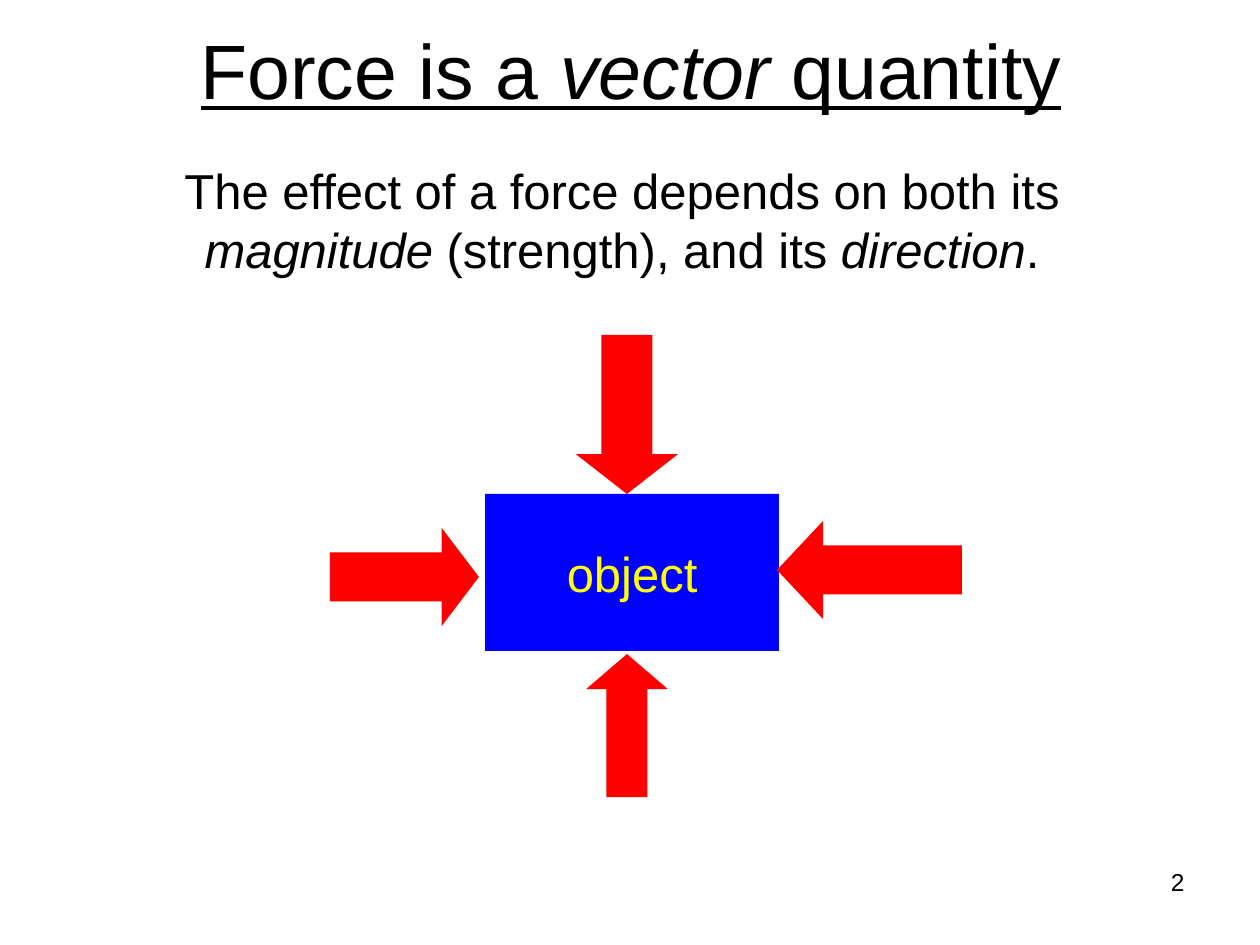
"""Build a slide on force as a vector quantity."""
from dataclasses import dataclass

from lxml import etree
from pptx import Presentation
from pptx.dml.color import RGBColor
from pptx.enum.shapes import MSO_SHAPE
from pptx.enum.text import MSO_ANCHOR, MSO_AUTO_SIZE, PP_ALIGN
from pptx.oxml.ns import qn
from pptx.util import Pt

RECT = MSO_SHAPE.RECTANGLE
RIGHT, LEFT = MSO_SHAPE.RIGHT_ARROW, MSO_SHAPE.LEFT_ARROW
UP, DOWN = MSO_SHAPE.UP_ARROW, MSO_SHAPE.DOWN_ARROW
TOP, MIDDLE = MSO_ANCHOR.TOP, MSO_ANCHOR.MIDDLE
CENTER, END = PP_ALIGN.CENTER, PP_ALIGN.RIGHT
FIXED = MSO_AUTO_SIZE.NONE
SCALE = 914400 / 126


@dataclass(frozen=True)
class Theme:
    font: str = "Arial"
    ink: str = "000000"
    block: str = "0000FF"
    label: str = "FFFF00"
    force: str = "FF0000"
    head: int = 44
    main: int = 28
    note: int = 14


theme = Theme()


def place(*box):
    return [round(n * SCALE) for n in box]


def write(shape, *lines, size, color=theme.ink, align=CENTER, anchor=TOP,
          under=None, wrap=True):
    """Write lines of text; every second part of a line is italic."""
    frame = shape.text_frame
    frame.word_wrap, frame.auto_size = wrap, FIXED
    frame.vertical_anchor = anchor
    para = frame.paragraphs[0]
    para.alignment = align
    for row, line in enumerate(lines):
        if row:
            para.add_line_break()
        for part, text in enumerate(line.split("*")):
            if text:
                run = para.add_run()
                run.text = text
                font = run.font
                font.name, font.size = theme.font, Pt(size)
                font.italic, font.underline = part % 2 == 1, under
                font.color.rgb = RGBColor.from_string(color)
    return para


deck = Presentation()
deck.slide_width, deck.slide_height = place(1260, 945)
slide = deck.slides.add_slide(deck.slide_layouts[1])
shapes = slide.shapes

title, body = slide.placeholders
title.left, title.top, title.width, title.height = place(64, 13, 1134, 112)
write(title, "Force is a *vector* quantity", size=theme.head,
      anchor=MIDDLE, under=True)

body.left, body.top, body.width, body.height = place(0, 154, 1244, 162)
para = write(body, "The effect of a force depends on both its",
             "*magnitude* (strength), and its *direction*.", size=theme.main)
para.space_before = Pt(theme.main * 0.2)
props = para._p.get_or_add_pPr()
props.set("marL", "0")
props.set("indent", "0")
etree.SubElement(props, qn("a:buNone"))

figures = [
    (RECT, (485, 494, 294, 157), theme.block, None),
    (RIGHT, (330, 528, 149, 98), theme.force, 0.38),
    (LEFT, (777, 521, 185, 98), theme.force, 0.47),
    (UP, (586, 654, 82, 143), theme.force, 0.43),
    (DOWN, (576, 335, 102, 159), theme.force, 0.39),
]
for kind, box, color, tip in figures:
    shape = shapes.add_shape(kind, *place(*box))
    shape.shadow.inherit = False
    shape.fill.solid()
    shape.fill.fore_color.rgb = RGBColor.from_string(color)
    shape.line.fill.background()
    if tip:
        shape.adjustments[0] = 0.5
        shape.adjustments[1] = tip
    else:
        write(shape, "object", size=theme.main, color=theme.label,
              anchor=MIDDLE, wrap=False)

number = shapes.add_textbox(*place(903, 861, 294, 66))
write(number, "2", size=theme.note, align=END)

deck.save("out.pptx")
